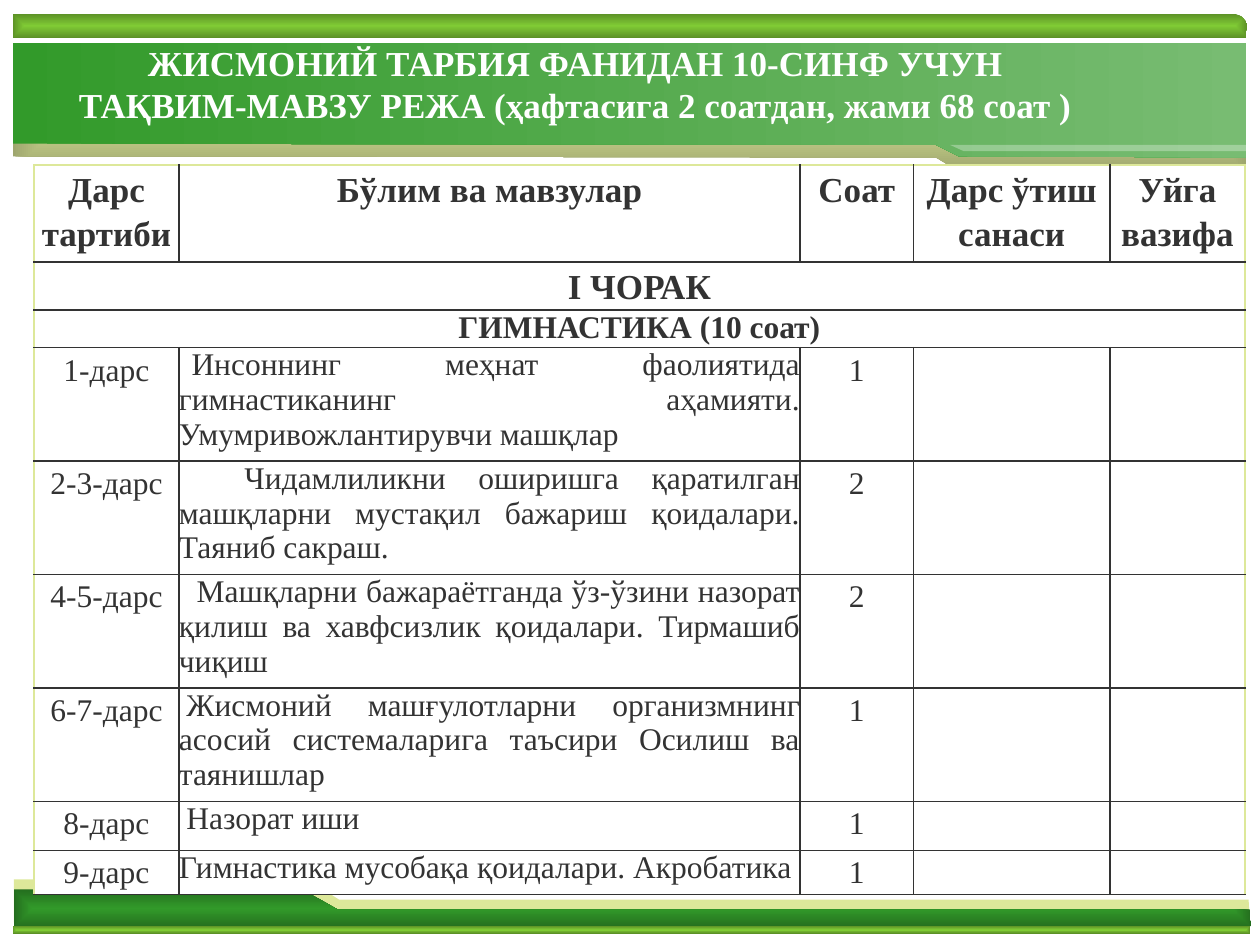
from pptx import Presentation
from pptx.dml.color import RGBColor as Rgb
from pptx.enum.shapes import MSO_SHAPE as Kind
from pptx.enum.text import PP_ALIGN as Al, MSO_AUTO_SIZE as Fit
from pptx.oxml.ns import qn
from pptx.util import Inches, Pt
from lxml.etree import SubElement as Sub

UNIT = Inches(10) // 1000
FONT = "Times New Roman"
HUES = {
    "white": "FFFFFF", "ink": "333333", "pale": "DDE89A", "olive": "9EA66E",
    "green": "329A2A", "forest": "246E1E", "mist": "78BC72",
    "lime": "80CB35", "moss": "5C9126",
}
COLS = [115, 493, 90, 156, 107]
ROWS = [77, 38, 30, 90, 90, 90, 90, 39, 35]
HEADS = ["Дарс тартиби", "Бўлим ва мавзулар", "Соат", "Дарс ўтиш санаси", "Уйга вазифа"]
TERM = "I ЧОРАК"
UNIT_NAME = "ГИМНАСТИКА (10 соат)"
PLAN = [
    ("1-дарс", "Инсоннинг меҳнат фаолиятида гимнастиканинг аҳамияти. Умумривожлантирувчи машқлар", "1", 10),
    ("2-3-дарс", "Чидамлиликни оширишга қаратилган машқларни мустақил бажариш қоидалари. Таяниб сакраш.", "2", 52),
    ("4-5-дарс", "Машқларни бажараётганда ўз-ўзини назорат қилиш ва хавфсизлик қоидалари. Тирмашиб чиқиш", "2", 14),
    ("6-7-дарс", "Жисмоний машғулотларни организмнинг асосий системаларига таъсири Осилиш ва таянишлар", "1", 6),
    ("8-дарс", "Назорат иши", "1", 6),
    ("9-дарс", "Гимнастика мусобақа қоидалари. Акробатика", "1", 0),
]
TITLE = ["ЖИСМОНИЙ ТАРБИЯ ФАНИДАН 10-СИНФ УЧУН",
         "ТАҚВИМ-МАВЗУ РЕЖА (ҳафтасига 2 соатдан, жами 68 соат )"]


def tint(name):
    return Rgb.from_string(HUES[name])


def grid(*nums):
    return [num * UNIT for num in nums]


def paint(shape, first, last=None, path=None, alpha=None):
    shape.shadow.inherit = False
    shape.line.fill.background()
    fill = shape.fill
    if last is None:
        fill.solid()
        fill.fore_color.rgb = tint(first)
        if alpha:
            color = shape._element.spPr.find(qn("a:solidFill"))[0]
            Sub(color, qn("a:alpha"), val=str(alpha * 1000))
        return
    fill.gradient()
    fill.gradient_angle = 0
    for stop, name in zip(fill.gradient_stops, (first, last)):
        stop.color.rgb = tint(name)
    for stop, place in zip(fill.gradient_stops, (0, 1)):
        stop.position = place
    if path:
        grad = shape._element.spPr.find(qn("a:gradFill"))
        grad.remove(grad.find(qn("a:lin")))
        node = Sub(grad, qn("a:path"), path=path)
        Sub(node, qn("a:fillToRect"), {side: "50000" for side in "ltrb"})


def outline(slide, points, *look, **more):
    pen = slide.shapes.build_freeform(*points[0], scale=UNIT)
    pen.add_line_segments(points[1:], close=True)
    paint(pen.convert_to_shape(), *look, **more)


def frame(slide):
    outline(slide, [(11, 732), (992, 732), (991, 714), (269, 714), (244, 698), (11, 698)], "pale")
    outline(slide, [(11, 736), (993, 735), (992, 722), (268, 722), (240, 706), (11, 706)],
            "green", "forest", path="rect")
    outline(slide, [(10, 11), (980, 11), (985, 13), (988, 16), (990, 19), (989, 30), (10, 30)],
            "lime", "moss", path="rect")
    outline(slide, [(989, 34), (10, 34), (10, 124), (743, 125), (761, 136), (989, 136)],
            "pale", "olive", path="rect")
    outline(slide, [(989, 34), (10, 34), (10, 114), (743, 115), (761, 124), (989, 125)],
            "green", "mist")
    bar = slide.shapes.add_shape(Kind.RECTANGLE, *grid(10, 735, 982, 6))
    paint(bar, "lime", "moss", path="rect")
    outline(slide, [(754, 115), (990, 115), (990, 120), (765, 120)], "white", alpha=30)


def style(para, size, hue, bold, align):
    para.alignment = align
    font = para.font
    font.name, font.size, font.bold = FONT, Pt(size), bold
    font.color.rgb = tint(hue)


def edge(cell, sides):
    props = cell._tc.get_or_add_tcPr()
    for side, name in sides.items():
        line = Sub(props, qn("a:ln" + side), w=str(Pt(1)))
        fill = Sub(line, qn("a:solidFill"))
        Sub(fill, qn("a:srgbClr"), val=HUES[name])


def write(cell, text, size=18, bold=False, align=Al.CENTER, loose=True, indent=0):
    para = cell.text_frame.paragraphs[0]
    para.text = text
    if loose:
        para.line_spacing = 1.15
        para.space_after = Pt(9.8)
    if indent:
        props = para._p.get_or_add_pPr()
        props.set("marL", "0")
        props.set("indent", str(indent * UNIT))
    style(para, size, "ink", bold, align)


def blank(table):
    last = len(COLS) - 1
    for r in range(len(ROWS)):
        for c in range(len(COLS)):
            cell = table.cell(r, c)
            wide = r in (1, 2)
            edge(cell, {
                "L": "pale" if c == 0 else "ink",
                "R": "pale" if c == last or wide else "ink",
                "T": "pale" if r == 0 else "ink",
                "B": "ink",
            })
            cell.fill.solid()
            cell.fill.fore_color.rgb = tint("white")
            cell.margin_left = cell.margin_right = 0
            cell.margin_top = cell.margin_bottom = 0
            cell.text_frame.paragraphs[0].font.size = Pt(18)


def lessons(slide):
    area = grid(27, 131, sum(COLS), sum(ROWS))
    table = slide.shapes.add_table(len(ROWS), len(COLS), *area).table
    table.first_row = table.horz_banding = False
    for col, width in zip(table.columns, COLS):
        col.width = width * UNIT
    for row, height in zip(table.rows, ROWS):
        row.height = height * UNIT
    blank(table)
    for r in (1, 2):
        table.cell(r, 0).merge(table.cell(r, len(COLS) - 1))
    for c, head in enumerate(HEADS):
        write(table.cell(0, c), head, 20, True)
    write(table.cell(1, 0), TERM, 20, True)
    write(table.cell(2, 0), UNIT_NAME, 18, True, loose=False)
    for r, (name, topic, hours, indent) in enumerate(PLAN, 3):
        write(table.cell(r, 0), name)
        write(table.cell(r, 1), topic, align=Al.JUSTIFY, loose=False, indent=indent)
        write(table.cell(r, 2), hours)


def title(slide):
    box = slide.shapes.add_textbox(*grid(27, 28, 859, 77)).text_frame
    box.word_wrap = True
    box.auto_size = Fit.SHAPE_TO_FIT_TEXT
    box.text = "\n".join(TITLE)
    for para in box.paragraphs:
        style(para, 20, "white", True, Al.CENTER)


def main():
    deck = Presentation()
    deck.slide_width, deck.slide_height = grid(1000, 750)
    slide = deck.slides.add_slide(deck.slide_layouts[6])
    frame(slide)
    lessons(slide)
    title(slide)
    deck.save("out.pptx")


if __name__ == "__main__":
    main()
